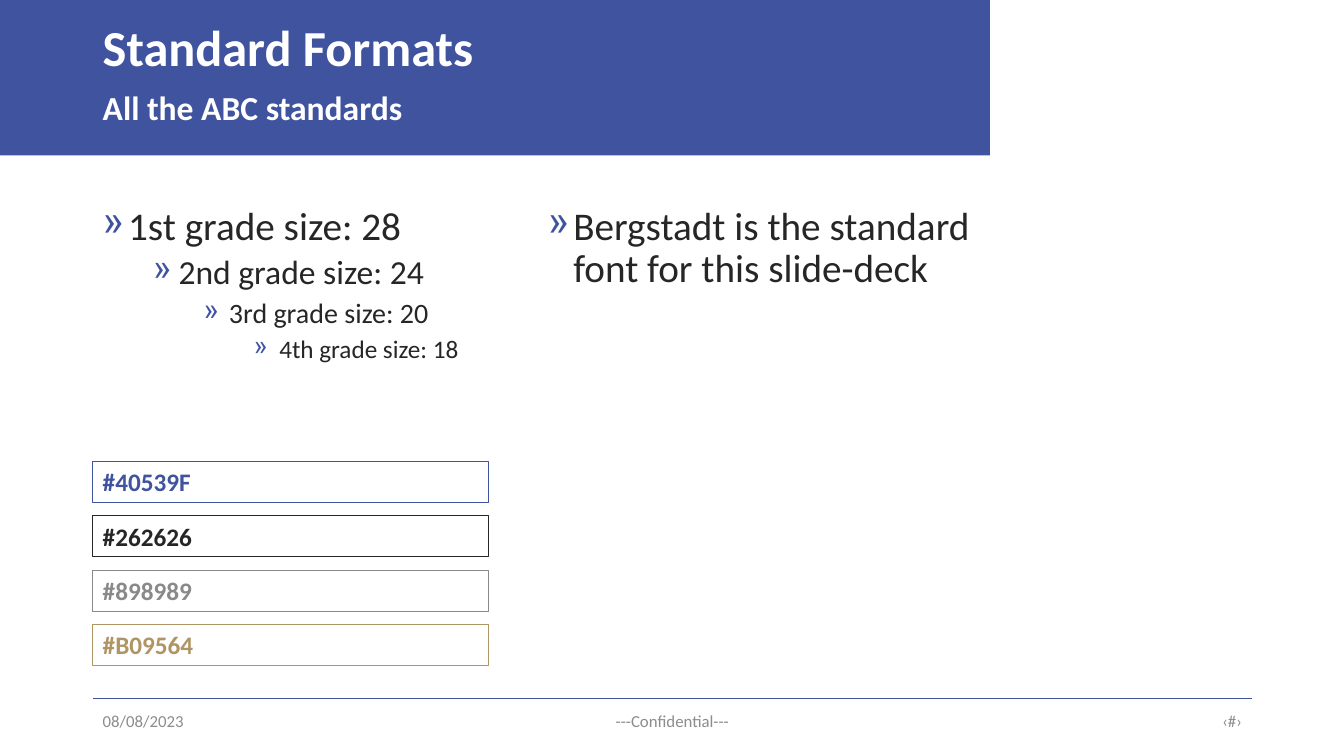
from lxml.etree import SubElement
from pptx import Presentation
from pptx.dml.color import RGBColor
from pptx.enum.shapes import MSO_CONNECTOR, MSO_SHAPE
from pptx.enum.text import MSO_ANCHOR, PP_ALIGN
from pptx.oxml.ns import qn
from pptx.util import Cm, Pt

BLUE, DARK, GREY, GOLD = "40539F", "262626", "898989", "B09564"
LEFT, WIDE = 2.34, 9.98


def paint(target, color):
    if hasattr(target, "solid"):
        target.solid()
        target = target.fore_color
    target.rgb = RGBColor.from_string(color)


def write(shape, lines, color, bold=False, align=PP_ALIGN.LEFT,
          anchor=MSO_ANCHOR.TOP, spacing=None, bullet=False):
    frame = shape.text_frame
    frame.word_wrap = True
    frame.vertical_anchor = anchor
    for level, (words, size) in enumerate(lines):
        para = frame.add_paragraph() if level else frame.paragraphs[0]
        para.text = words
        para.alignment = align
        para.level = level
        if spacing:
            para.line_spacing = spacing
        if level:
            para.space_before = Pt(5)
        if bullet:
            props = para._p.get_or_add_pPr()
            props.set("marL", str(Cm(0.64 + 1.27 * level)))
            props.set("indent", str(Cm(-0.64)))
            tint = SubElement(props, qn("a:buClr"))
            SubElement(tint, qn("a:srgbClr"), val=BLUE)
            SubElement(props, qn("a:buChar"), char="»")
        font = para.font
        font.name = "Calibri"
        font.size = Pt(size)
        font.bold = bold
        paint(font.color, color)


deck = Presentation()
deck.slide_width, deck.slide_height = Cm(33.87), Cm(19.05)
slide = deck.slides.add_slide(deck.slide_layouts[6])
shapes = slide.shapes

band = shapes.add_shape(MSO_SHAPE.RECTANGLE, 0, 0, Cm(24.95), Cm(3.92))
band.shadow.inherit = False
paint(band.fill, BLUE)
band.line.fill.background()

rule = shapes.add_connector(
    MSO_CONNECTOR.STRAIGHT, Cm(LEFT), Cm(17.6), Cm(31.55), Cm(17.6))
paint(rule.line.color, BLUE)
rule.line.width = Pt(0.5)
SubElement(rule._element.spPr, qn("a:effectLst"))

title = shapes.add_textbox(Cm(LEFT), Cm(0.41), Cm(20), Cm(1.7))
write(title, [("Standard Formats", 36)], "FFFFFF", bold=True,
      anchor=MSO_ANCHOR.MIDDLE, spacing=0.9)
topic = shapes.add_textbox(Cm(LEFT), Cm(2.26), Cm(20), Cm(1.1))
write(topic, [("All the ABC standards", 24)], "FFFFFF", bold=True, spacing=0.8)

grades = [("1st grade size: 28", 28), ("2nd grade size: 24", 24),
          ("3rd grade size: 20", 20), ("4th grade size: 18", 18)]
note = [("Bergstadt is the standard font for this slide-deck", 28)]
for left, width, height, lines in [(LEFT, WIDE, 5.08, grades),
                                   (13.56, 11.15, 6.55, note)]:
    body = shapes.add_textbox(Cm(left), Cm(5.08), Cm(width), Cm(height))
    write(body, lines, DARK, spacing=0.9, bullet=True)

for row, color in enumerate([BLUE, DARK, GREY, GOLD]):
    swatch = shapes.add_shape(MSO_SHAPE.RECTANGLE, Cm(LEFT),
                              Cm(11.63 + 1.37 * row), Cm(WIDE), Cm(1.03))
    swatch.shadow.inherit = False
    swatch.fill.background()
    paint(swatch.line.color, color)
    swatch.line.width = Pt(0.75)
    write(swatch, [("#" + color, 18)], color, bold=True)

for left, width, words, align in [
        (LEFT, 7.62, "08/08/2023", PP_ALIGN.LEFT),
        (11.23, 11.43, "---Confidential---", PP_ALIGN.CENTER),
        (23.93, 7.62, "‹#›", PP_ALIGN.RIGHT)]:
    foot = shapes.add_textbox(Cm(left), Cm(17.65), Cm(width), Cm(1.01))
    write(foot, [(words, 12)], "8C8C8C", align=align, anchor=MSO_ANCHOR.MIDDLE)

deck.save("out.pptx")
